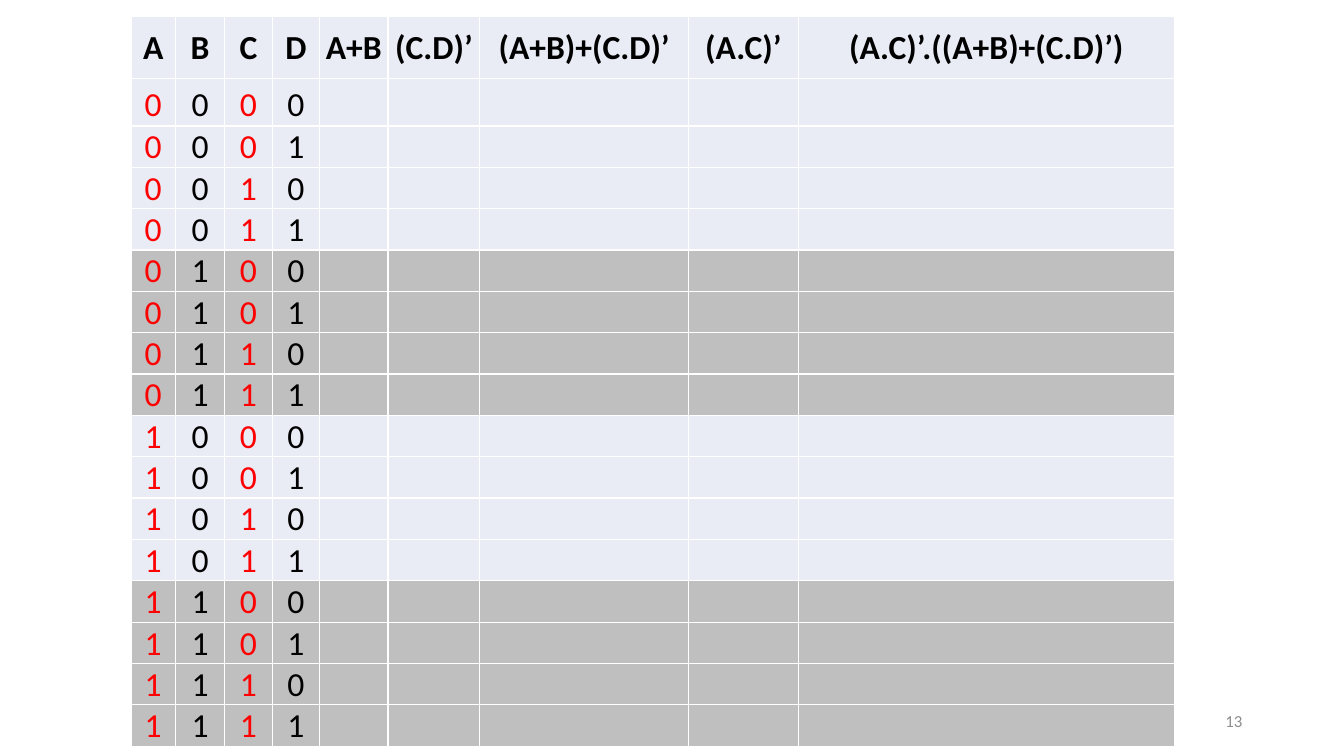
from dataclasses import dataclass
from itertools import product

from lxml import etree
from pptx import Presentation
from pptx.dml.color import RGBColor
from pptx.enum.text import MSO_ANCHOR, PP_ALIGN
from pptx.oxml.ns import qn
from pptx.slide import Slide
from pptx.table import _Cell
from pptx.text.text import _Paragraph
from pptx.util import Inches, Pt

MIDDLE = MSO_ANCHOR.MIDDLE
BOTTOM = MSO_ANCHOR.BOTTOM
CENTER = PP_ALIGN.CENTER
RIGHT = PP_ALIGN.RIGHT
BLANK_LAYOUT = 6


@dataclass(frozen=True)
class Theme:
    font: str = "Calibri"
    table_size: int = 24
    number_size: int = 12
    black: str = "000000"
    red: str = "FF0000"
    muted: str = "8C8C8C"
    light_fill: str = "E9EBF5"
    dark_fill: str = "BFBFBF"
    border: str = "FFFFFF"
    border_width: int = 1


@dataclass(frozen=True)
class Column:
    heading: str
    width: float
    color: str = Theme.black


THEME = Theme()
COLUMNS = [
    Column("A", 0.44, THEME.red),
    Column("B", 0.49),
    Column("C", 0.47, THEME.red),
    Column("D", 0.47),
    Column("A+B", 0.68),
    Column("(C.D)’", 0.91),
    Column("(A+B)+(C.D)’", 2.07),
    Column("(A.C)’", 1.09),
    Column("(A.C)’.((A+B)+(C.D)’)", 3.73),
]
INPUT_COUNT = 4
ROWS_PER_BAND = 4
HEADER_HEIGHT = 0.62
FIRST_ROW_HEIGHT = 0.47
ROW_HEIGHT = 0.38


def style_paragraph(
    paragraph: _Paragraph, size: int, color: str, alignment: PP_ALIGN, bold: bool = False
) -> None:
    paragraph.alignment = alignment
    for font in [paragraph.font] + [run.font for run in paragraph.runs]:
        font.name = THEME.font
        font.size = Pt(size)
        font.bold = bold
        font.color.rgb = RGBColor.from_string(color)


def add_borders(cell: _Cell) -> None:
    properties = cell._tc.get_or_add_tcPr()
    for side in ("a:lnL", "a:lnR", "a:lnT", "a:lnB"):
        line = etree.SubElement(properties, qn(side), w=str(Pt(THEME.border_width)))
        fill = etree.SubElement(line, qn("a:solidFill"))
        etree.SubElement(fill, qn("a:srgbClr"), val=THEME.border)


def draw_cell(
    cell: _Cell, text: str, color: str, fill: str, anchor: MSO_ANCHOR, bold: bool
) -> None:
    cell.margin_left = cell.margin_right = cell.margin_top = Inches(0.01)
    cell.margin_bottom = Inches(0)
    cell.vertical_anchor = anchor
    add_borders(cell)
    cell.fill.solid()
    cell.fill.fore_color.rgb = RGBColor.from_string(fill)
    cell.text_frame.text = text
    style_paragraph(cell.text_frame.paragraphs[0], THEME.table_size, color, CENTER, bold)


def draw_truth_table(slide: Slide) -> None:
    input_rows = list(product("01", repeat=INPUT_COUNT))
    heights = [HEADER_HEIGHT, FIRST_ROW_HEIGHT] + [ROW_HEIGHT] * (len(input_rows) - 1)
    table = slide.shapes.add_table(
        len(heights), len(COLUMNS), Inches(1.3), Inches(0.16),
        Inches(sum(column.width for column in COLUMNS)), Inches(sum(heights)),
    ).table
    table.horz_banding = False
    for row, height in zip(table.rows, heights):
        row.height = Inches(height)
    for index, column in enumerate(COLUMNS):
        table.columns[index].width = Inches(column.width)
        draw_cell(
            table.cell(0, index), column.heading, THEME.black, THEME.light_fill, MIDDLE, True
        )
        for row_index, inputs in enumerate(input_rows):
            is_dark = row_index // ROWS_PER_BAND % 2
            fill = THEME.dark_fill if is_dark else THEME.light_fill
            text = inputs[index] if index < INPUT_COUNT else ""
            draw_cell(
                table.cell(row_index + 1, index), text, column.color, fill, BOTTOM, False
            )


def draw_slide_number(slide: Slide) -> None:
    box = slide.shapes.add_textbox(Inches(9.42), Inches(6.95), Inches(3), Inches(0.4))
    text_frame = box.text_frame
    text_frame.word_wrap = True
    text_frame.vertical_anchor = MIDDLE
    text_frame.text = "13"
    style_paragraph(text_frame.paragraphs[0], THEME.number_size, THEME.muted, RIGHT)


def main() -> None:
    presentation = Presentation()
    presentation.slide_width = Inches(13.33)
    presentation.slide_height = Inches(7.5)
    slide = presentation.slides.add_slide(presentation.slide_layouts[BLANK_LAYOUT])
    draw_slide_number(slide)
    draw_truth_table(slide)
    presentation.save("out.pptx")


if __name__ == "__main__":
    main()
